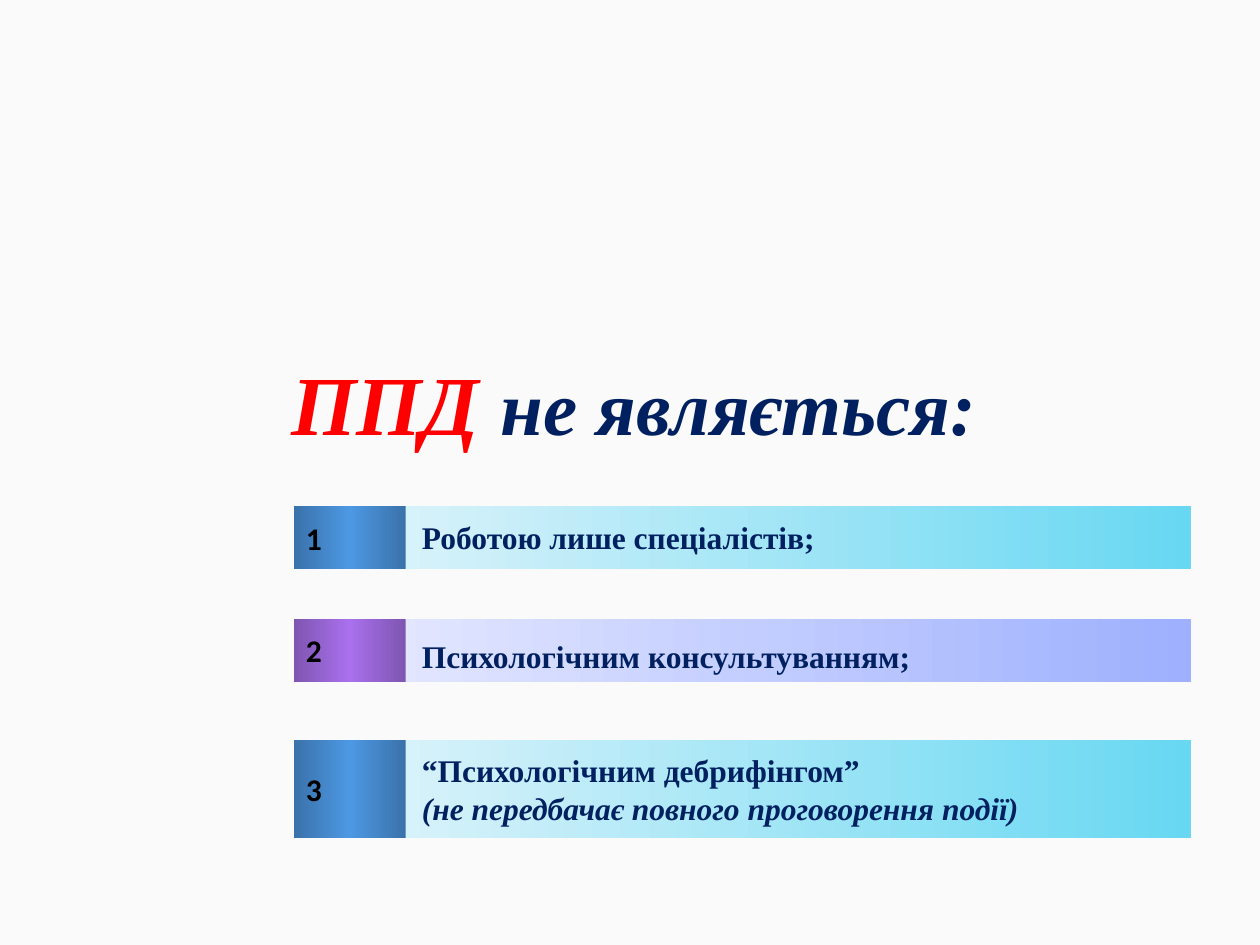
from copy import deepcopy

from pptx import Presentation
from pptx.dml.color import RGBColor
from pptx.enum.shapes import MSO_SHAPE as SHAPE
from pptx.enum.text import MSO_ANCHOR as ANCHOR, MSO_AUTO_SIZE as AUTO, PP_ALIGN as ALIGN
from pptx.util import Inches, Pt

PAPER = RGBColor(0xFA, 0xFA, 0xFA)
RED = RGBColor(0xFF, 0x00, 0x00)
NAVY = RGBColor(0x00, 0x20, 0x60)
BLACK = RGBColor(0x00, 0x00, 0x00)
AQUA = (RGBColor(0xD8, 0xF2, 0xFA), RGBColor(0x68, 0xD8, 0xF2))
LILAC = (RGBColor(0xE2, 0xE6, 0xFF), RGBColor(0x9E, 0xB0, 0xFE))
STEEL, SKY = RGBColor(0x3A, 0x72, 0xAA), RGBColor(0x4D, 0x98, 0xE3)
PLUM, VIOLET = RGBColor(0x7F, 0x55, 0xB1), RGBColor(0xA9, 0x71, 0xED)
BLUE_TAG = (STEEL, SKY, STEEL)
PURPLE_TAG = (PLUM, VIOLET, PLUM)


class Deck:
    serif, sans = "Times New Roman", "Calibri"

    def __init__(self):
        self.prs = Presentation()
        self.prs.slide_width, self.prs.slide_height = Inches(10), Inches(7.5)
        self.s = self.prs.slides.add_slide(self.prs.slide_layouts[6])
        fill = self.s.background.fill
        fill.solid()
        fill.fore_color.rgb = PAPER

    def font(self, r, name, size, color, italic=False):
        f = r.font
        f.name, f.size, f.bold, f.italic = name, Pt(size), True, italic
        f.color.rgb = color

    def title(self, x, y, w, h, parts):
        tf = self.s.shapes.add_textbox(*map(Inches, (x, y, w, h))).text_frame
        tf.word_wrap = True
        tf.vertical_anchor = ANCHOR.MIDDLE
        p = tf.paragraphs[0]
        p.alignment, p.line_spacing = ALIGN.CENTER, 0.9
        for text, size, color in parts:
            r = p.add_run()
            r.text = text
            self.font(r, self.serif, size, color, italic=True)

    def band(self, group, x, y, w, h, colors):
        sp = group.shapes.add_shape(SHAPE.RECTANGLE, *map(Inches, (x, y, w, h)))
        sp.shadow.inherit = False
        sp.line.fill.background()
        sp.fill.gradient()
        sp.fill.gradient_angle = 0
        if len(colors) == 3:
            # A gradient starts with two stops; insert a middle one
            first = sp.fill._fill._gradFill.gsLst[0]
            first.addnext(deepcopy(first))
        for i, (stop, color) in enumerate(zip(sp.fill.gradient_stops, colors)):
            stop.position = i / (len(colors) - 1)
            stop.color.rgb = color
        return sp

    def row(self, number, y, h, bar, tag):
        group = self.s.shapes.add_group_shape()
        self.band(group, 3.11, y, 6.34, h, bar)
        tf = self.band(group, 2.33, y, 0.89, h, tag).text_frame
        tf.word_wrap = False
        tf.vertical_anchor = ANCHOR.MIDDLE
        tf.text = str(number)
        p = tf.paragraphs[0]
        p.alignment = ALIGN.LEFT
        self.font(p.runs[0], self.sans, 18, BLACK)

    def label(self, y, w, h, text):
        tf = self.s.shapes.add_textbox(*map(Inches, (3.25, y, w, h))).text_frame
        tf.word_wrap = True
        tf.auto_size = AUTO.SHAPE_TO_FIT_TEXT
        p = tf.paragraphs[0]
        p.text = text
        # The second line is an italic remark
        for i, r in enumerate(p.runs):
            self.font(r, self.serif, 18, NAVY, italic=i > 0)


def main():
    deck = Deck()

    # Heading
    deck.title(0.11, 2.75, 10, 0.98, [("ППД ", 48, RED), ("не являється: ", 44, NAVY)])

    # Numbered bars
    rows = [(4.02, 0.5, AQUA, BLUE_TAG), (4.91, 0.5, LILAC, PURPLE_TAG),
            (5.87, 0.78, AQUA, BLUE_TAG)]
    for number, row in enumerate(rows, 1):
        deck.row(number, *row)

    # Statements on the bars
    deck.label(4.06, 4.42, 0.4, "Роботою лише спеціалістів;")
    deck.label(5.01, 6.37, 0.4, "Психологічним консультуванням;")
    deck.label(5.91, 6.37, 0.71,
               "“Психологічним дебрифінгом” \v(не передбачає повного проговорення події)")

    deck.prs.save("out.pptx")


if __name__ == "__main__":
    main()
